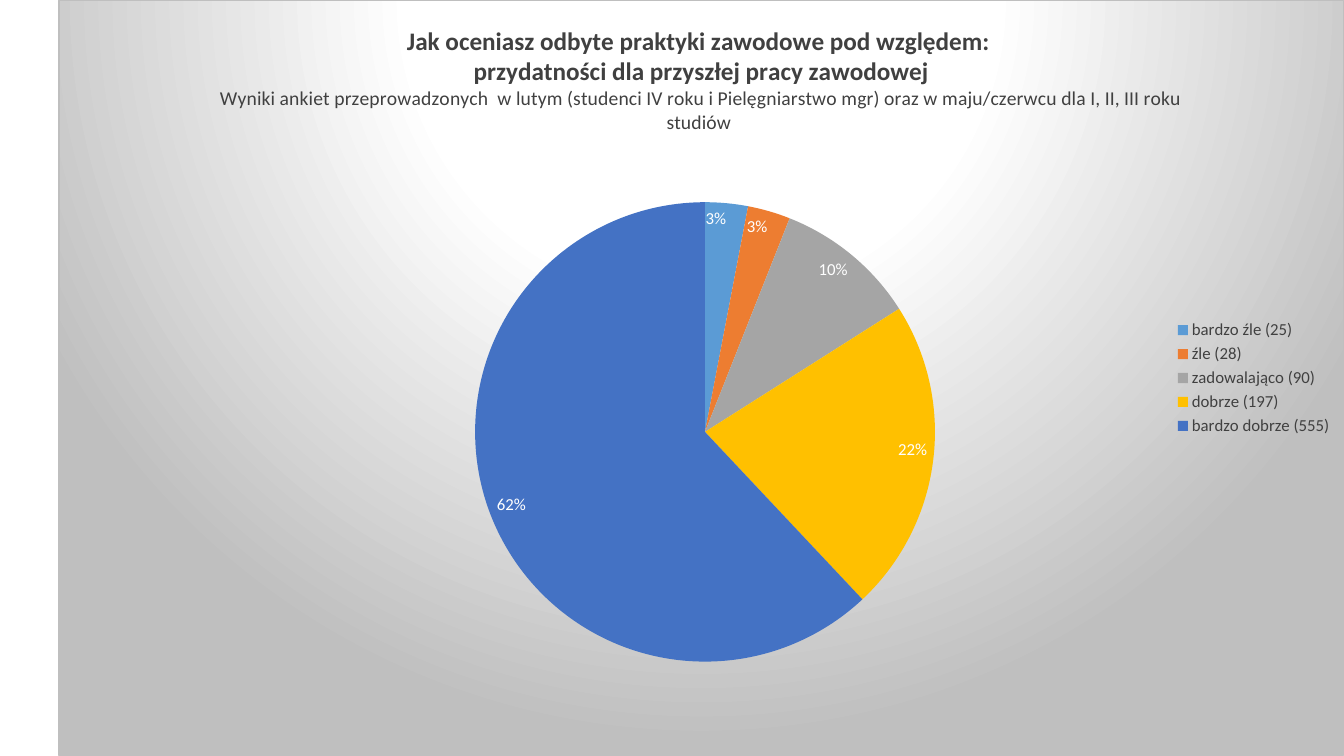
import pptx
import pptx.util
import pptx.chart.data
import pptx.dml.color
import pptx.enum.chart
import pptx.oxml
import pptx.oxml.ns

Inches = pptx.util.Inches
Pt = pptx.util.Pt

COLORS = {
    "text": "404040",
    "label": "FFFFFF",
    "edge": "BFBFBF",
    "legend": "F2F2F2",
    "pattern_front": "404040",
    "pattern_back": "595959",
}
ANSWERS = [
    ("bardzo źle (25)", 3, "5B9BD5"),
    ("źle (28)", 3, "ED7D31"),
    ("zadowalająco (90)", 10, "A5A5A5"),
    ("dobrze (197)", 22, "FFC000"),
    ("bardzo dobrze (555)", 62, "4472C4"),
]
TITLE_LINES = [
    ("Jak oceniasz odbyte praktyki zawodowe pod względem: ", 18, True),
    ("przydatności dla przyszłej pracy zawodowej", 18, True),
    ("Wyniki ankiet przeprowadzonych  w lutym (studenci IV roku i Pielęgniarstwo mgr) "
     "oraz w maju/czerwcu dla I, II, III roku studiów ", 14, False),
]


def style_font(font, size, color, bold=False):
    font.name = "Calibri"
    font.size = Pt(size)
    font.bold = bold
    font.color.rgb = pptx.dml.color.RGBColor.from_string(COLORS[color])


def chart_xml(tag, content):
    return pptx.oxml.parse_xml(
        f'<c:{tag} {pptx.oxml.ns.nsdecls("c", "a")}>{content}</c:{tag}>')


deck = pptx.Presentation()
deck.slide_width = Inches(13.33)
deck.slide_height = Inches(7.5)
page = deck.slides.add_slide(deck.slide_layouts[6])

data = pptx.chart.data.CategoryChartData(number_format="0")
data.categories = [name for name, share, color in ANSWERS]
data.add_series("Series 1", [share for name, share, color in ANSWERS])
chart = page.shapes.add_chart(
    pptx.enum.chart.XL_CHART_TYPE.PIE,
    Inches(0.58), Inches(0), Inches(12.75), Inches(7.5), data).chart
style_font(chart.font, 10, "text")

chart.has_title = True
title = chart.chart_title.text_frame
for index, (text, size, bold) in enumerate(TITLE_LINES):
    para = title.add_paragraph() if index else title.paragraphs[0]
    style_font(para.font, size, "text", bold)
    span = para.add_run()
    span.text = text
    style_font(span.font, size, "text", bold)

plot = chart.plots[0]
plot.vary_by_categories = True
for index, (name, share, color) in enumerate(ANSWERS):
    fill = plot.series[0].points[index].format.fill
    fill.solid()
    fill.fore_color.rgb = pptx.dml.color.RGBColor.from_string(color)

plot.has_data_labels = True
labels = plot.data_labels
labels.show_percentage = True
labels.show_value = False
labels.number_format = "0%"
labels.number_format_is_linked = False
labels.position = pptx.enum.chart.XL_LABEL_POSITION.INSIDE_END
style_font(labels.font, 12, "label")
labels.font._element.getparent().getparent().addprevious(chart_xml(
    "spPr",
    '<a:pattFill prst="pct75">'
    f'<a:fgClr><a:srgbClr val="{COLORS["pattern_front"]}"/></a:fgClr>'
    f'<a:bgClr><a:srgbClr val="{COLORS["pattern_back"]}"/></a:bgClr>'
    '</a:pattFill><a:ln><a:noFill/></a:ln>'))

chart.has_legend = True
legend = chart.legend
legend.position = pptx.enum.chart.XL_LEGEND_POSITION.RIGHT
legend.include_in_layout = False
style_font(legend.font, 12, "text")
legend.font._element.getparent().getparent().addprevious(chart_xml(
    "spPr",
    f'<a:solidFill><a:srgbClr val="{COLORS["legend"]}"><a:alpha val="39000"/>'
    '</a:srgbClr></a:solidFill><a:ln><a:noFill/></a:ln>'))

chart_root = chart._chartSpace
plot_area = chart_root.find(".//" + pptx.oxml.ns.qn("c:plotArea"))
for layout in plot_area.findall(pptx.oxml.ns.qn("c:layout")):
    plot_area.remove(layout)
frame = [("x", 0.324), ("y", 0.267), ("w", 0.358), ("h", 0.609)]
plot_area.insert(0, chart_xml(
    "layout",
    '<c:manualLayout><c:layoutTarget val="inner"/>'
    '<c:xMode val="edge"/><c:yMode val="edge"/>'
    + "".join(f'<c:{side} val="{value}"/>' for side, value in frame)
    + '</c:manualLayout>'))

stops = [(0, "label"), (39000, "label"), (100000, "edge")]
chart_root.find(pptx.oxml.ns.qn("c:chart")).addnext(chart_xml(
    "spPr",
    '<a:gradFill><a:gsLst>'
    + "".join(f'<a:gs pos="{stop}"><a:srgbClr val="{COLORS[color]}"/></a:gs>'
              for stop, color in stops)
    + '</a:gsLst><a:path path="circle">'
    '<a:fillToRect l="50000" t="-80000" r="50000" b="180000"/></a:path></a:gradFill>'
    f'<a:ln w="{Pt(0.75)}"><a:solidFill><a:srgbClr val="{COLORS["edge"]}"/>'
    '</a:solidFill></a:ln>'))

deck.save("out.pptx")
